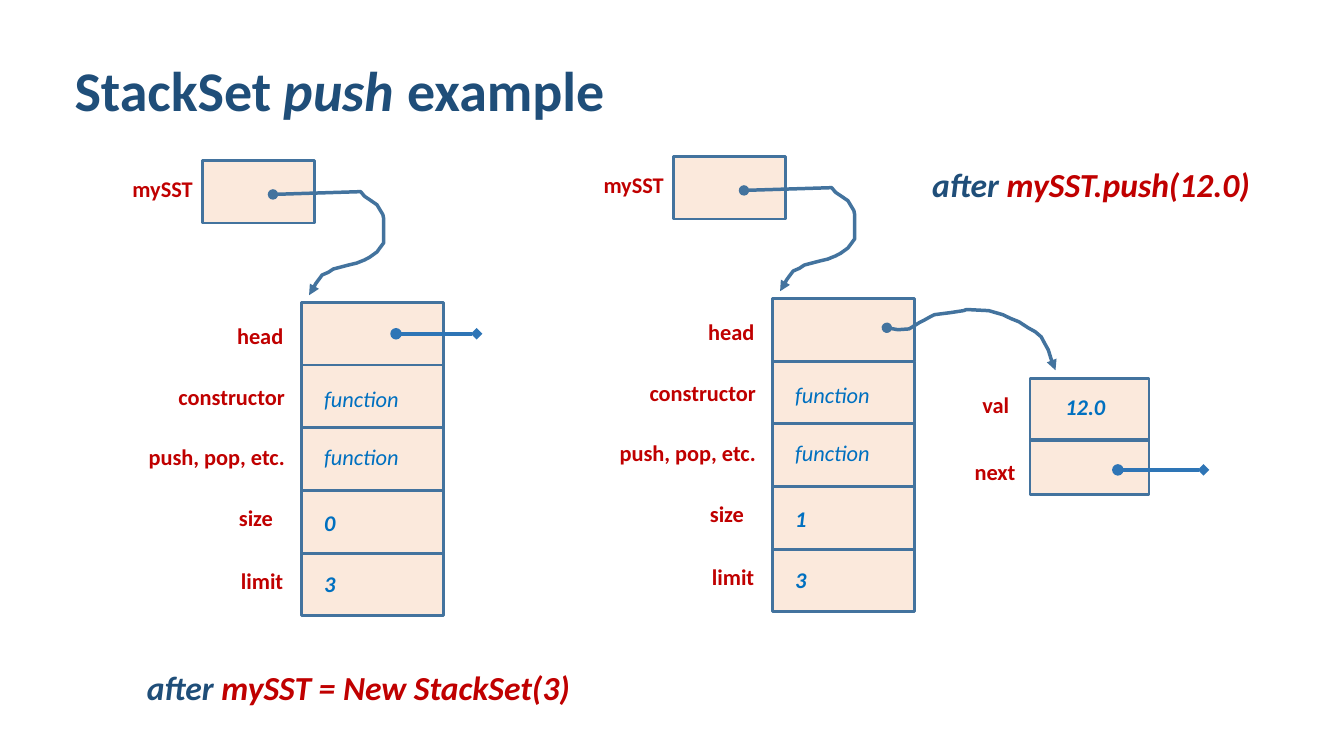
from lxml import etree
from pptx import Presentation
from pptx.dml.color import RGBColor
from pptx.enum.shapes import MSO_CONNECTOR, MSO_SHAPE
from pptx.enum.text import PP_ALIGN
from pptx.oxml.ns import qn
from pptx.util import Cm, Pt

COLORS = {
    "navy": "1F4E79",
    "red": "C00000",
    "blue": "0070C0",
    "cell": "F4B183",
    "outline": "43739E",
    "null": "2E75B6",
}
LABEL = {"size": Pt(16), "bold": True, "color": "red"}
METHOD = {"size": Pt(16), "italic": True, "color": "blue"}
VALUE = {**METHOD, "bold": True}
TITLE = {"size": Pt(40), "bold": True, "color": "navy"}
CAPTION = {"size": Pt(24), "bold": True, "italic": True, "color": "navy"}

STACK_WIDTH = 3.58
ROW_HEIGHT = 1.58
TEXT_HEIGHT = 1.14
LABELS = [
    ("head", 0.38, 3.94, -0.2),
    ("constructor", 1.9, 3.3, -0.16),
    ("push, pop, etc.", 3.43, 3.96, -0.16),
    ("size", 4.95, 2.7, -0.46),
    ("limit", 6.55, 3.07, -0.2),
]
STACK_POINTER = [
    (-0.71, -2.72), (1.5, -2.79), (1.6, -2.67), (1.75, -2.57), (1.91, -2.46),
    (2.06, -2.21), (2.08, -2.11), (2.08, -1.5), (1.91, -1.27), (1.73, -1.14),
    (1.6, -1.07), (1.4, -0.99), (1.19, -0.94), (0.81, -0.84), (0.69, -0.76),
    (0.53, -0.69), (0.41, -0.53), (0.36, -0.46), (0.28, -0.3), (0.2, -0.18),
]
NODE_POINTER = [
    (-3.61, -1.27), (-3.33, -1.22), (-3.05, -1.24), (-2.95, -1.3),
    (-2.79, -1.4), (-2.69, -1.45), (-2.51, -1.55), (-2.41, -1.6),
    (-2.01, -1.65), (-1.68, -1.7), (-1.6, -1.73), (-1.04, -1.7),
    (-0.69, -1.6), (-0.48, -1.5), (-0.28, -1.42), (-0.05, -1.27),
    (0.13, -1.17), (0.28, -1.04), (0.36, -0.89), (0.46, -0.71),
    (0.53, -0.48), (0.64, -0.2),
]


def color(name):
    return RGBColor.from_string(COLORS[name])


def add_text(slide, runs, left, top, width, height=TEXT_HEIGHT,
             alignment=PP_ALIGN.LEFT):
    shape = slide.shapes.add_textbox(Cm(left), Cm(top), Cm(width), Cm(height))
    shape.text_frame.word_wrap = True
    paragraph = shape.text_frame.paragraphs[0]
    paragraph.alignment = alignment
    for text, style in runs:
        run = paragraph.add_run()
        run.text = text
        run.font.name = "Calibri"
        for name, value in style.items():
            if name == "color":
                run.font.color.rgb = color(value)
            else:
                setattr(run.font, name, value)


def add_cell(slide, left, top, width, height):
    shape = slide.shapes.add_shape(
        MSO_SHAPE.RECTANGLE, Cm(left), Cm(top), Cm(width), Cm(height))
    shape.shadow.inherit = False
    shape.fill.solid()
    shape.fill.fore_color.rgb = color("cell")
    fill_color = shape.fill._xPr.find(qn("a:solidFill"))[0]
    etree.SubElement(fill_color, qn("a:alpha"), val="28000")
    shape.line.color.rgb = color("outline")
    shape.line.width = Pt(2)


def style_line(shape, color_name, width, tail):
    shape.line.color.rgb = color(color_name)
    shape.line.width = Pt(width)
    line = shape.line._get_or_add_ln()
    etree.SubElement(line, qn("a:round"))
    etree.SubElement(line, qn("a:headEnd"), type="oval")
    etree.SubElement(line, qn("a:tailEnd"), type=tail)


def add_pointer(slide, left, top, offsets):
    points = [(Cm(left + x), Cm(top + y)) for x, y in offsets]
    builder = slide.shapes.build_freeform(*points[0])
    builder.add_line_segments(points[1:], close=False)
    shape = builder.convert_to_shape()
    shape.shadow.inherit = False
    shape.fill.background()
    style_line(shape, "outline", 2.5, "triangle")


def add_null(slide, left, top, length):
    connector = slide.shapes.add_connector(
        MSO_CONNECTOR.STRAIGHT, Cm(left), Cm(top), Cm(left + length), Cm(top))
    style_line(connector, "null", 2.75, "diamond")
    etree.SubElement(connector._element.spPr, qn("a:effectLst"))


def add_stack(slide, left, top, size):
    add_text(slide, [("mySST", LABEL)], left - 4.5, top - 3.34, 2.16)
    add_cell(slide, left - 2.49, top - 3.58, 2.82, ROW_HEIGHT)
    for row, (label, offset, width, right) in enumerate(LABELS):
        add_cell(slide, left, top + row * ROW_HEIGHT, STACK_WIDTH, ROW_HEIGHT)
        add_text(slide, [(label, LABEL)], left + right - width, top + offset,
                 width, alignment=PP_ALIGN.RIGHT)
    values = [("function", METHOD, 1.97), ("function", METHOD, 3.43),
              (size, VALUE, 5.08), ("3", VALUE, 6.63)]
    for text, style, offset in values:
        add_text(slide, [(text, style)], left + 0.33, top + offset, 2.72)
    add_pointer(slide, left, top, STACK_POINTER)


def add_node(slide, left, top):
    add_cell(slide, left, top, 3, 1.55)
    add_cell(slide, left, top + 1.57, 3, 1.37)
    add_text(slide, [("12.0", VALUE)], left + 0.64, top + 0.25, 2.21, 1.3)
    add_text(slide, [("val", LABEL)], left - 1.45, top + 0.2, 1.55, 1.3)
    add_text(slide, [("next", LABEL)], left - 1.65, top + 1.9, 1.88, 1.3)
    add_null(slide, left + 2.21, top + 2.31, 2.16)
    add_pointer(slide, left, top, NODE_POINTER)


def add_caption(slide, left, top, width, code):
    runs = [("after ", CAPTION), (code, {**CAPTION, "color": "red"})]
    add_text(slide, runs, left, top, width, 1.27)


def main():
    presentation = Presentation()
    presentation.slide_width = Cm(33.87)
    presentation.slide_height = Cm(19.05)
    slide = presentation.slides.add_slide(presentation.slide_layouts[6])
    title = [("StackSet ", TITLE), ("push", {**TITLE, "italic": True}),
             (" example", TITLE)]
    add_text(slide, title, 1.63, 1.27, 19.63, 1.96)
    add_caption(slide, 3.45, 16.69, 11.35, "mySST = New StackSet(3)")
    add_stack(slide, 7.59, 7.62, "0")
    add_null(slide, 9.98, 8.41, 2.03)
    add_caption(slide, 23.24, 4.01, 10.13, "mySST.push(12.0)")
    add_stack(slide, 19.46, 7.52, "1")
    add_node(slide, 25.96, 9.53)
    presentation.save("out.pptx")


if __name__ == "__main__":
    main()
